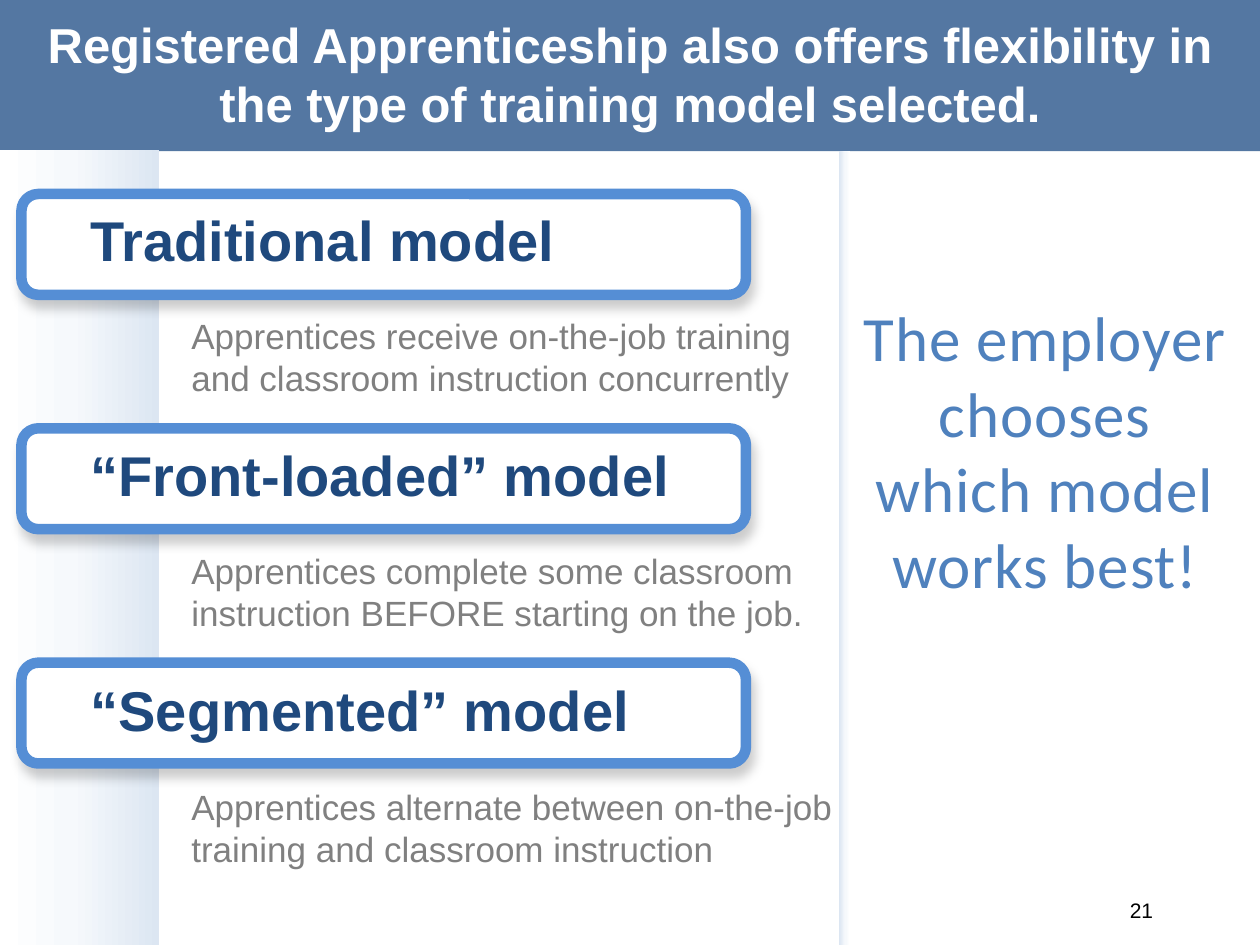
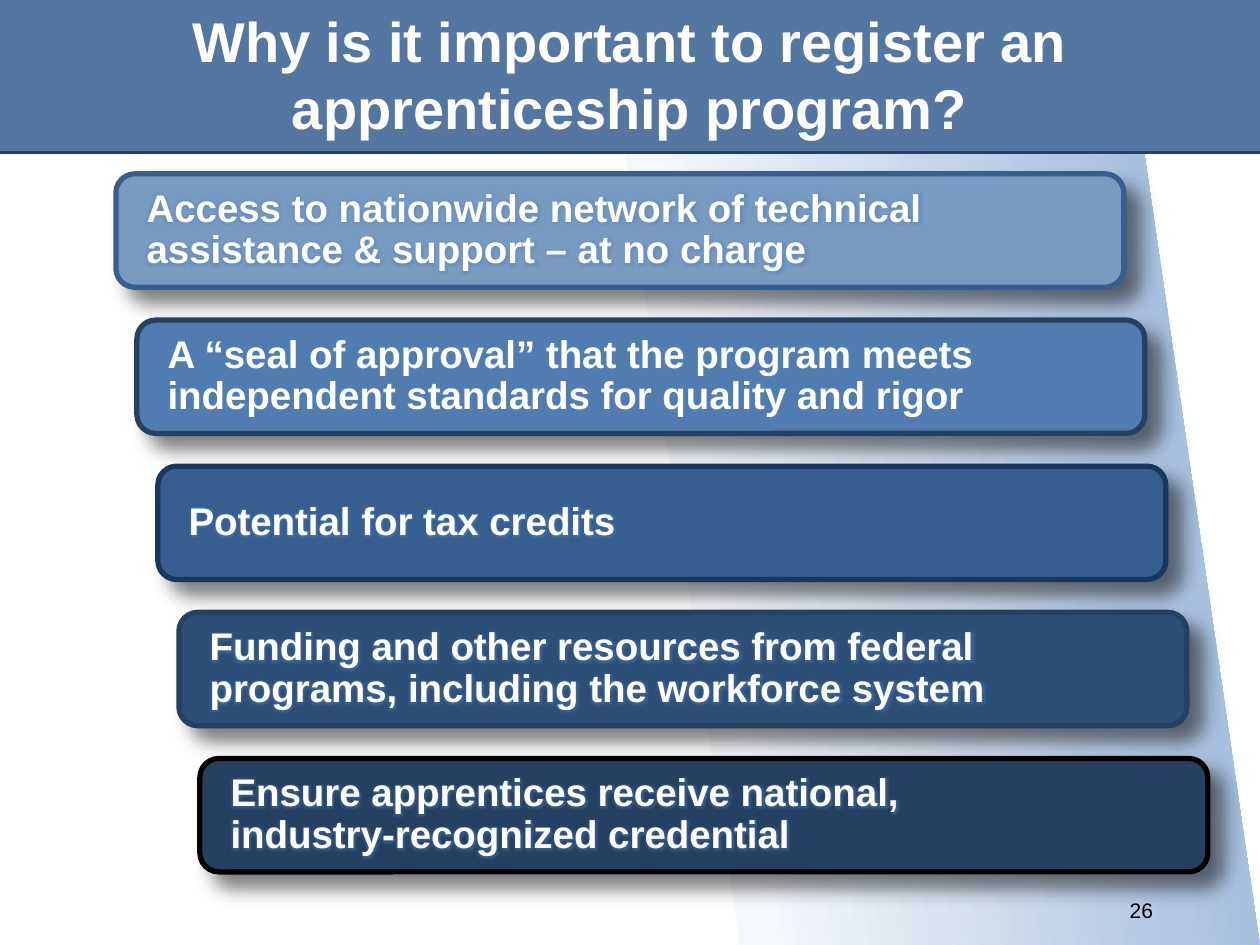
import pptx
import pptx.util
import pptx.oxml
import pptx.oxml.ns
import pptx.dml.color
import pptx.enum.shapes
import pptx.enum.text
from dataclasses import dataclass

Inches, Pt = pptx.util.Inches, pptx.util.Pt
SHAPE = pptx.enum.shapes.MSO_SHAPE
ALIGN = pptx.enum.text.PP_ALIGN
ANCHOR = pptx.enum.text.MSO_ANCHOR
qn = pptx.oxml.ns.qn
NS = pptx.oxml.ns.nsdecls("a")


@dataclass(frozen=True)
class Theme:
    font: str = "Arial"
    call_font: str = "Calibri"
    band: str = "376092"
    white: str = "FFFFFF"
    black: str = "000000"
    navy: str = "1F497D"
    gray: str = "808080"
    blue: str = "4F81BD"
    frame: str = "558ED5"
    rule: str = "254061"
    pale: tuple = ((0, "FFFFFF"), (45, "F6F9FC"), (100, "DCE6F2"))
    sweep: tuple = ((1, "FFFFFF"), (19, "F6F9FC"), (74, "B0C6E1"), (100, "95B3D7"))
    call: int = 36
    head: int = 32
    bar: int = 22
    body: int = 20
    page: int = 12


T = Theme()

MODELS = [
    ("Traditional model",
     "Apprentices receive on-the-job training and classroom instruction concurrently"),
    ("“Front-loaded” model",
     "Apprentices complete some classroom instruction BEFORE starting on the job."),
    ("“Segmented” model",
     "Apprentices alternate between on-the-job training and classroom instruction"),
]

# text, fill, line
REASONS = [
    ("Access to nationwide network of technical assistance & support – at no charge",
     "799AC1", "365E8E"),
    ("A “seal of approval” that the program meets independent standards for quality and rigor",
     "517CAF", "254061"),
    ("Potential for tax credits", "365E8E", "17375E"),
    ("Funding and other resources from federal programs, including the workforce system",
     "2D4E77", "254061"),
    ("Ensure apprentices receive national,\vindustry-recognized credential",
     "254061", "000000"),
]


def rgb(code):
    return pptx.dml.color.RGBColor.from_string(code)


def xml(text):
    return pptx.oxml.parse_xml(text)


def style(para, size, color, bold=False, font=T.font, align=None):
    para.alignment = align
    for run in para.runs:
        run.font.size, run.font.bold, run.font.name = Pt(size), bold, font
        run.font.color.rgb = rgb(color)


def space(para, before, after):
    para.space_before, para.space_after = Pt(before), Pt(after)


def add_box(slide, kind, box, fill, line=None, width=0):
    shape = slide.shapes.add_shape(kind, *map(Inches, box))
    shape.shadow.inherit = False
    shape.fill.solid()
    shape.fill.fore_color.rgb = rgb(fill)
    if line:
        shape.line.color.rgb = rgb(line)
        shape.line.width = Pt(width)
    else:
        shape.line.fill.background()
    return shape


def add_text(slide, box):
    frame = slide.shapes.add_textbox(*map(Inches, box)).text_frame
    frame.word_wrap = True
    return frame


def set_grad(shape, stops, angle):
    """Fill with a linear gradient; the angle runs clockwise from the right."""
    shape.fill.solid()
    old = shape.element.spPr.find(qn("a:solidFill"))
    marks = "".join(f'<a:gs pos="{pos * 1000}"><a:srgbClr val="{code}"/></a:gs>'
                    for pos, code in stops)
    old.addnext(xml(f'<a:gradFill {NS} rotWithShape="1"><a:gsLst>{marks}</a:gsLst>'
                    f'<a:lin ang="{angle * 60000}" scaled="0"/></a:gradFill>'))
    shape.element.spPr.remove(old)


def set_shade(shape, alpha, blur, dist, angle):
    shape.element.spPr.find(qn("a:effectLst")).append(xml(
        f'<a:outerShdw {NS} blurRad="{Pt(blur)}" dist="{Pt(dist)}" '
        f'dir="{angle * 60000}" algn="tl" rotWithShape="0">'
        f'<a:srgbClr val="{T.black}"><a:alpha val="{alpha * 1000}"/></a:srgbClr>'
        '</a:outerShdw>'))


def set_glow(run):
    run.font.fill._xPr.find(qn("a:solidFill")).addnext(xml(
        f'<a:effectLst {NS}><a:glow rad="{Pt(5)}"><a:srgbClr val="{T.blue}">'
        '<a:alpha val="40000"/></a:srgbClr></a:glow></a:effectLst>'))


def add_slide(deck, title, size, page, wide):
    """Start a slide with its header band, title and page number."""
    slide = deck.slides.add_slide(deck.slide_layouts[5])
    head = slide.shapes.title
    head.left, head.top, head.width, head.height = map(Inches, (0, 0, 10, 1.17))
    head.text_frame.text = title
    head.text_frame.vertical_anchor = ANCHOR.MIDDLE
    style(head.text_frame.paragraphs[0], size, T.white, True, align=ALIGN.CENTER)

    band = add_box(slide, SHAPE.RECTANGLE, (-0.01, 0, 10.01, 1.2), T.band)
    tint = band.element.spPr.find(qn("a:solidFill"))[0]
    tint.append(xml(f'<a:alpha {NS} val="85000"/>'))
    head.element.addprevious(band.element)

    foot = add_text(slide, (9.25 - wide, 7.02, wide, 0.4))
    foot.vertical_anchor = ANCHOR.MIDDLE
    foot.text = page
    style(foot.paragraphs[0], T.page, T.black, align=ALIGN.RIGHT)
    return slide


def add_strip(slide, box, angle):
    strip = add_box(slide, SHAPE.RECTANGLE, box, T.white)
    set_grad(strip, T.pale, angle)


def add_models(slide, left, top, wide):
    for i in range(len(MODELS)):
        frame = add_box(slide, SHAPE.ROUNDED_RECTANGLE,
                        (left, top + i * 1.86, wide, 0.8), T.white, T.frame, 6)
        set_shade(frame, 20, 6, 5, 70)
    text = add_text(slide, (left + 0.45, top + 0.04, wide + 0.5, 6.17))
    for i, (name, note) in enumerate(MODELS):
        para = text.add_paragraph() if i else text.paragraphs[0]
        para.text = name
        space(para, 6 if i else 0, 6)
        style(para, T.head, T.navy, True)
        para = text.add_paragraph()
        para.text = note
        para._p.get_or_add_pPr().set("marL", str(Inches(0.8)))
        space(para, 18, 18)
        style(para, T.body, T.gray)


def add_call(slide, box):
    para = add_text(slide, box).paragraphs[0]
    para.text = "The employer chooses\vwhich model works best!"
    space(para, 0, 6)
    style(para, T.call, T.blue, font=T.call_font, align=ALIGN.CENTER)
    for run in para.runs:
        run.font._element.set("spc", "50")


def add_sweep(slide, x, y):
    """Tilted parallelogram centred on x, y."""
    pts = [(Inches(x + dx), Inches(y + dy)) for dx, dy in
           ((-2.9, -2.04), (3.48, -2.04), (2.9, 2.04), (-3.48, 2.04))]
    form = slide.shapes.build_freeform(*pts[0])
    form.add_line_segments(pts[1:], close=True)
    sweep = form.convert_to_shape()
    sweep.shadow.inherit = False
    sweep.line.fill.background()
    sweep.rotation = 81.7
    set_grad(sweep, T.sweep, 270)


def add_bars(slide, left, top, wide, high):
    for i, (text, fill, line) in enumerate(REASONS):
        box = (left + i / 6, top + i * 1.16, wide, high)
        bar = add_box(slide, SHAPE.ROUNDED_RECTANGLE, box, fill, line, 3)
        set_shade(bar, 50, 11, 10, 45)
        frame = bar.text_frame
        frame.word_wrap = True
        frame.vertical_anchor = ANCHOR.MIDDLE
        frame.margin_left = frame.margin_right = Inches(0.2)
        frame.margin_top = frame.margin_bottom = Inches(0.1)
        frame.text = text
        para = frame.paragraphs[0]
        para.line_spacing = 0.9
        style(para, T.bar, T.white, True, align=ALIGN.LEFT)
        for run in para.runs:
            set_glow(run)


def add_rule(slide, y):
    rule = slide.shapes.add_connector(
        pptx.enum.shapes.MSO_CONNECTOR.STRAIGHT, *map(Inches, (0, y, 10, y)))
    rule.line.color.rgb = rgb(T.rule)
    rule.line.width = Pt(1.25)
    rule.element.spPr.append(xml(f'<a:effectLst {NS}/>'))


def model_slide(deck):
    slide = add_slide(deck, "Registered Apprenticeship also offers flexibility in "
                      "the type of training model selected.", 28, "21", 0.75)
    add_strip(slide, (0, 1.19, 1.26, 6.32), 0)
    add_strip(slide, (6.66, 1.2, 0.09, 6.32), 180)
    add_models(slide, 0.17, 1.54, 5.75)
    add_call(slide, (6.67, 2.32, 3.25, 2.51))


def reason_slide(deck):
    slide = add_slide(deck, "Why is it important to register an apprenticeship program?",
                      32, "26", 2.33)
    add_sweep(slide, 7.48, 4.37)
    # the page number stays above the sweep
    foot = slide.shapes[2].element
    slide.shapes[-1].element.addnext(foot)
    add_bars(slide, 0.92, 1.38, 8, 0.9)
    add_rule(slide, 1.21)


def main():
    deck = pptx.Presentation()
    deck.slide_width, deck.slide_height = Inches(10), Inches(7.5)
    model_slide(deck)
    reason_slide(deck)
    deck.save("out.pptx")


if __name__ == "__main__":
    main()
